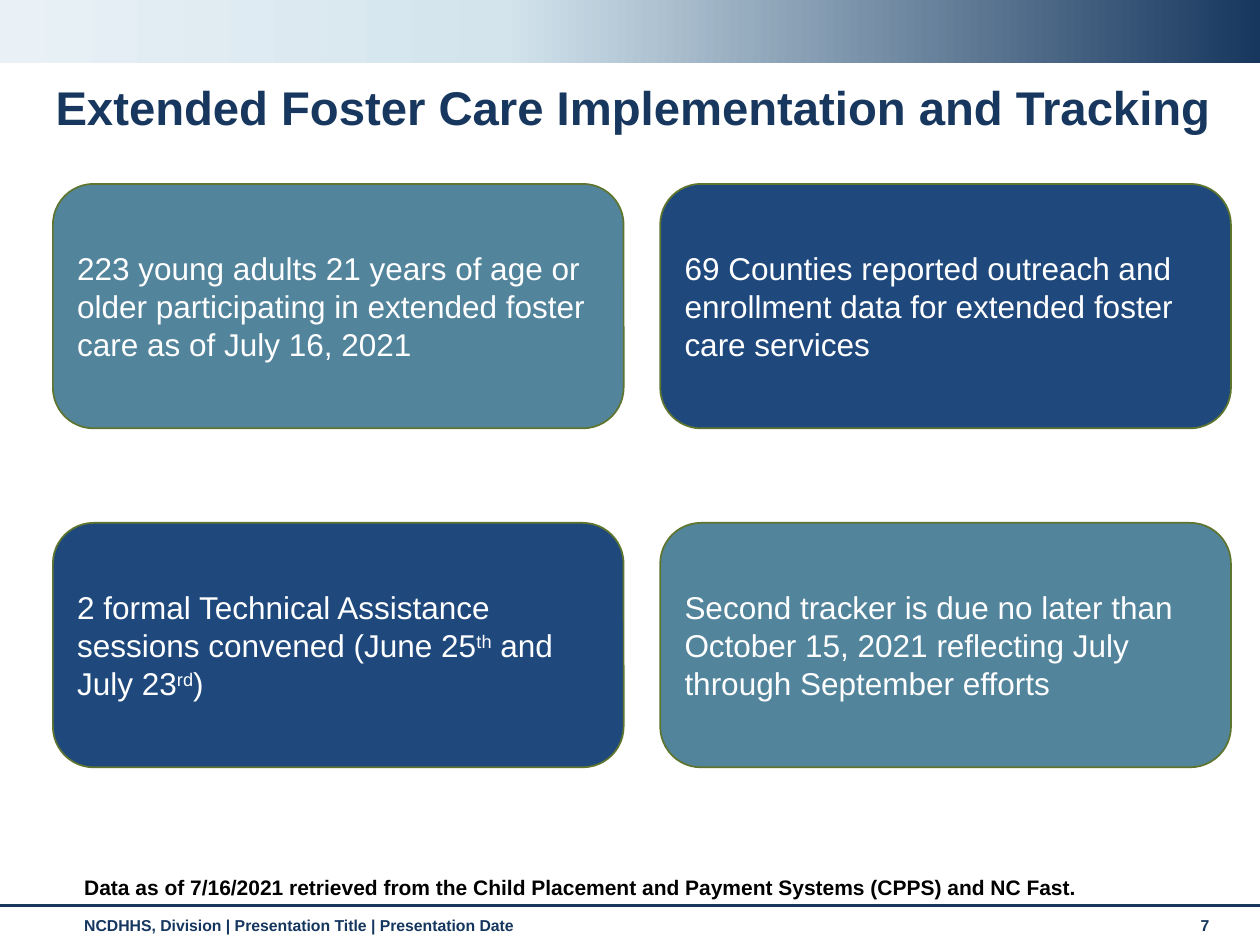
from copy import deepcopy

from lxml.etree import SubElement
from pptx import Presentation
from pptx.dml.color import RGBColor
from pptx.enum.shapes import MSO_CONNECTOR, MSO_SHAPE
from pptx.enum.text import MSO_ANCHOR, PP_ALIGN
from pptx.oxml.ns import qn
from pptx.util import Inches, Pt

COLORS = {
    "navy": "17375E",
    "footer": "15365E",
    "pale": "D3E4ED",
    "mist": "E9F1F6",
    "teal": "52849C",
    "blue": "1F497D",
    "olive": "5E752F",
    "white": "FFFFFF",
    "black": "000000",
}
CARDS = [
    ("teal", ["223 young adults 21 years of age or older participating in "
              "extended foster care as of July 16, 2021"]),
    ("blue", ["69 Counties reported outreach and enrollment data for "
              "extended foster care services"]),
    ("blue", ["2 formal Technical Assistance sessions convened (June 25", "th",
              " and July 23", "rd", ")"]),
    ("teal", ["Second tracker is due no later than October 15, 2021 "
              "reflecting July through September efforts"]),
]


def color(name):
    """Return the named colour."""
    return RGBColor.from_string(COLORS[name])


def write(shape, spans, size, ink, bold=False, align=PP_ALIGN.LEFT,
          anchor=MSO_ANCHOR.TOP, spacing=None):
    """Fill a shape with one paragraph; every second span is superscript."""
    frame = shape.text_frame
    frame.word_wrap = True
    frame.vertical_anchor = anchor
    para = frame.paragraphs[0]
    para.alignment = align
    para.line_spacing = spacing
    for index, text in enumerate(spans):
        span = para.add_run()
        span.text = text
        span.font.name = "Arial"
        span.font.size = Pt(size)
        span.font.bold = bold
        span.font.color.rgb = color(ink)
        if index % 2:
            span.font._element.set("baseline", "30000")


def add_label(page, text, left, top, width, height, **style):
    """Add a bold text box."""
    box = page.shapes.add_textbox(
        Inches(left), Inches(top), Inches(width), Inches(height))
    write(box, [text], bold=True, **style)


def add_banner(page):
    """Add the gradient band along the top edge."""
    banner = page.shapes.add_shape(
        MSO_SHAPE.RECTANGLE, 0, 0, Inches(10), Inches(0.5))
    banner.shadow.inherit = False
    banner.line.fill.background()
    banner.fill.gradient()
    banner.fill.gradient_angle = 180
    stop_list = banner._element.spPr.find(qn("a:gradFill")).find(qn("a:gsLst"))
    stop_list.append(deepcopy(stop_list[0]))
    stops = [(0, "navy"), (0.6, "pale"), (1, "mist")]
    for stop, (position, name) in zip(banner.fill.gradient_stops, stops):
        stop.position = position
        stop.color.rgb = color(name)


def add_rule(page, top):
    """Add the full-width line above the footer."""
    rule = page.shapes.add_connector(
        MSO_CONNECTOR.STRAIGHT, 0, Inches(top), Inches(10), Inches(top))
    rule.line.color.rgb = color("navy")
    rule.line.width = Pt(1.75)
    SubElement(rule._element.spPr, qn("a:effectLst"))


def add_card(page, left, top, fill, spans):
    """Add one rounded card with its statement."""
    card = page.shapes.add_shape(
        MSO_SHAPE.FLOWCHART_ALTERNATE_PROCESS,
        Inches(left), Inches(top), Inches(4.53), Inches(1.94))
    card.shadow.inherit = False
    card.fill.solid()
    card.fill.fore_color.rgb = color(fill)
    card.line.color.rgb = color("olive")
    card.line.width = Pt(1)
    write(card, spans, 18, "white", anchor=MSO_ANCHOR.MIDDLE)


def main():
    """Build and save the slide."""
    deck = Presentation()
    deck.slide_width, deck.slide_height = Inches(10), Inches(7.5)
    page = deck.slides.add_slide(deck.slide_layouts[6])
    add_label(page, "NCDHHS, Division | Presentation Title | Presentation Date",
              0.57, 7.22, 8.74, 0.29, size=9, ink="footer")
    add_label(page, "7", 9.43, 7.22, 0.44, 0.3, size=9, ink="footer")
    add_banner(page)
    add_rule(page, 7.19)
    add_label(page, "Extended Foster Care Implementation and Tracking",
              0.28, 0.62, 9.49, 0.6, size=27, ink="navy",
              align=PP_ALIGN.CENTER, spacing=0.9)
    add_label(page, "Data as of 7/16/2021 retrieved from the Child Placement "
              "and Payment Systems (CPPS) and NC Fast.",
              0.57, 6.83, 8.74, 0.36, size=12, ink="black",
              anchor=MSO_ANCHOR.BOTTOM)
    for index, (fill, spans) in enumerate(CARDS):
        row, column = divmod(index, 2)
        add_card(page, 0.42 + 4.82 * column, 1.46 + 2.69 * row, fill, spans)
    deck.save("out.pptx")


if __name__ == "__main__":
    main()
